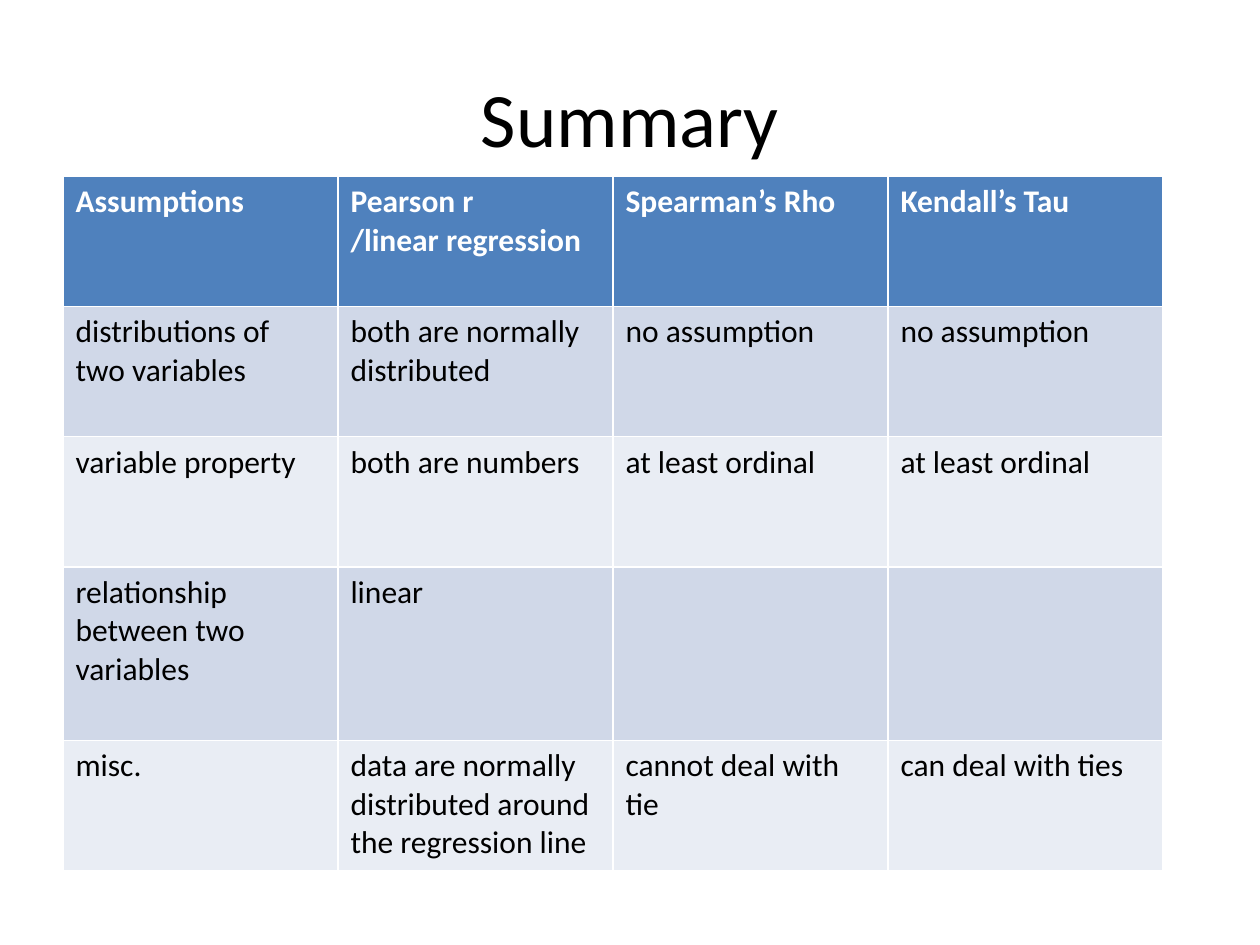
"""Build the Summary slide comparing the assumptions of three correlation methods."""
from pptx import Presentation
from pptx import util as u
from pptx.dml import color
from pptx.enum import text


def paint(target, hex_color):
    target.solid()
    target.fore_color.rgb = color.RGBColor.from_string(hex_color)


def style(p, size, hex_color, bold=False):
    p.font.name = "Calibri"
    p.font.size = u.Pt(size)
    p.font.bold = bold
    paint(p.font.fill, hex_color)


prs = Presentation()
prs.slide_width, prs.slide_height = u.Inches(10), u.Inches(7.5)
W, H = prs.slide_width, prs.slide_height
s = prs.slides.add_slide(prs.slide_layouts[5])

title = s.shapes.title
title.left, title.top = int(W * 0.05), int(H * 0.04)
title.width, title.height = int(W * 0.9), u.Inches(1.25)
tf = title.text_frame
tf.text = "Summary"
tf.vertical_anchor = text.MSO_ANCHOR.MIDDLE
p = tf.paragraphs[0]
p.alignment = text.PP_ALIGN.CENTER
style(p, 44, "000000")

rows = [
    ["Assumptions", "Pearson r\n/linear regression", "Spearman’s Rho", "Kendall’s Tau"],
    ["distributions of two variables", "both are normally distributed", "no assumption", "no assumption"],
    ["variable property", "both are numbers", "at least ordinal", "at least ordinal"],
    ["relationship between two variables", "linear", "", ""],
    ["misc.", "data are normally distributed around the regression line", "cannot deal with tie", "can deal with ties"],
]
row_shares = [3, 3, 3, 4, 3]
table_width, table_height = u.Inches(8.73), u.Inches(5.51)
table = s.shapes.add_table(
    len(rows), len(rows[0]), int(W * 0.05), u.Inches(1.4), table_width, table_height
).table

for r, (values, share) in enumerate(zip(rows, row_shares)):
    table.rows[r].height = int(table_height * share / sum(row_shares))
    header = r == 0
    fill = "4F81BD" if header else "D0D8E8" if r % 2 else "E9EDF4"
    for c, value in enumerate(values):
        cell = table.cell(r, c)
        cell.text = value
        paint(cell.fill, fill)
        for p in cell.text_frame.paragraphs:
            style(p, 18, "FFFFFF" if header else "000000", header)

prs.save("out.pptx")
